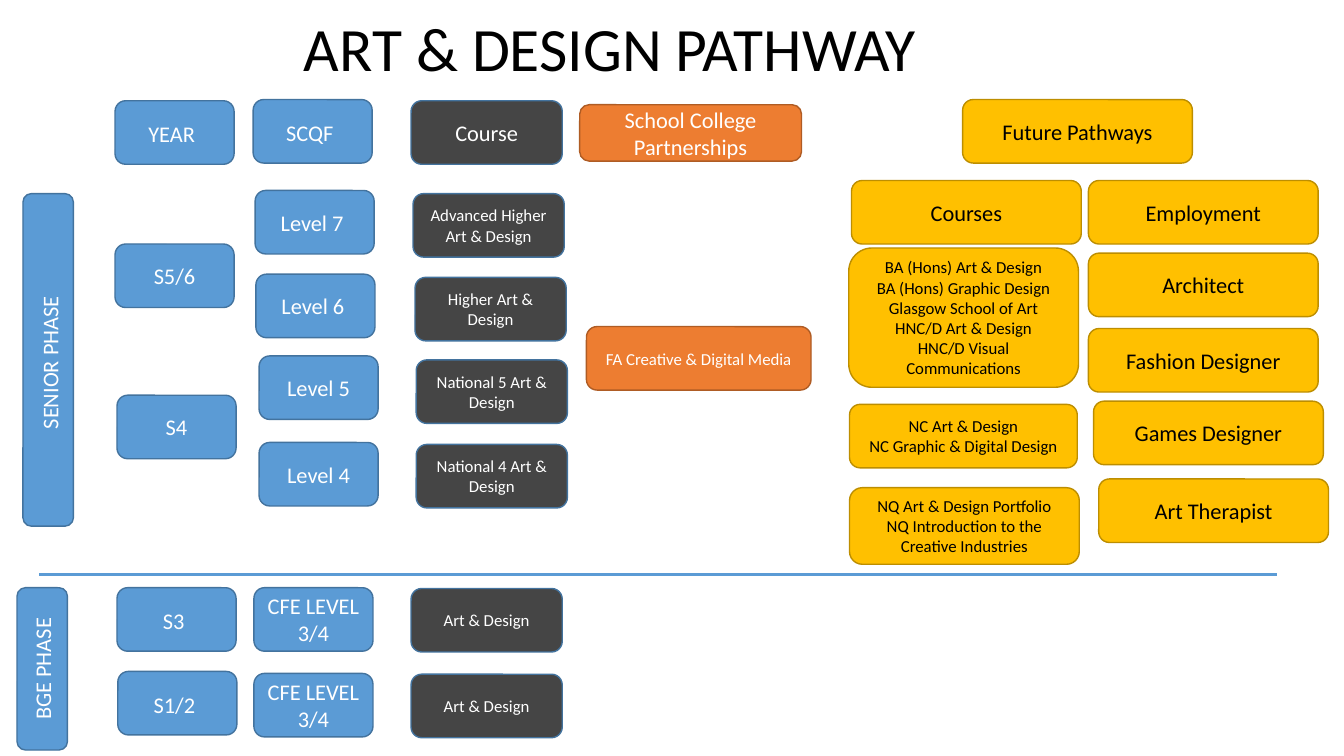
"""Build the Art & Design pathway slide."""
import lxml.etree
import pptx
import pptx.dml.color
import pptx.enum.shapes
import pptx.enum.text
import pptx.oxml.ns
import pptx.util
from pptx.util import Cm

COLOURS = {
    "blue": "5B9BD5", "blue_edge": "43739E",
    "grey": "454545",
    "orange": "ED7D31", "orange_edge": "AF5C24",
    "gold": "FFC000", "gold_edge": "BD8E00",
    "white": "FFFFFF", "black": "000000",
}
STYLES = {
    "blue": ("blue_edge", "white"),
    "grey": ("blue_edge", "white"),
    "orange": ("orange_edge", "white"),
    "gold": ("gold_edge", "black"),
}
LEVEL_W, COURSE_W, FUTURE_W, PHASE_W, BOX_H = 3, 3.81, 5.79, 1.27, 1.6

YEARS = [
    ("YEAR", 2.9, 2.54, 18),
    ("S5/6", 2.9, 6.15, None),
    ("S4", 2.95, 9.96, None),
    ("S3", 2.95, 14.81, 18),
    ("S1/2", 2.97, 16.92, 18),
]
LEVELS = [
    ("SCQF", 6.38, 2.51, 18),
    ("Level 7", 6.43, 4.8, 16),
    ("Level 6", 6.45, 6.91, 16),
    ("Level 5", 6.53, 8.97, None),
    ("Level 4", 6.53, 11.15, None),
    ("CFE LEVEL 3/4", 6.4, 14.81, None),
    ("CFE LEVEL 3/4", 6.4, 16.97, None),
]
COURSES = [
    ("Advanced Higher Art & Design", 10.41, 4.88),
    ("Higher Art & Design", 10.46, 6.99),
    ("National 5 Art & Design", 10.49, 9.07),
    ("National 4 Art & Design", 10.49, 11.2),
    ("Art & Design", 10.36, 14.83),
    ("Art & Design", 10.36, 16.99),
]
FUTURES = [
    ("Future Pathways", 24.26, 2.51),
    ("Courses", 21.46, 4.55),
    ("Employment", 27.43, 4.55),
    ("Architect", 27.43, 6.38),
    ("Fashion Designer", 27.43, 8.28),
    ("Games Designer", 27.56, 10.11),
    ("Art Therapist", 27.69, 12.07),
]
FURTHER_STUDY = [
    ("BA (Hons) Art & Design\nBA (Hons) Graphic Design\nGlasgow School of Art\n"
     "HNC/D Art & Design\nHNC/D Visual Communications", 21.39, 6.25, 5.79, 3.51),
    ("NC Art & Design\nNC Graphic & Digital Design", 21.41, 10.19, 5.74, 1.6),
    ("NQ Art & Design Portfolio\nNQ Introduction to the Creative Industries",
     21.41, 12.29, 5.79, 1.93),
]


def rgb(name):
    return pptx.dml.color.RGBColor.from_string(COLOURS[name])


def write(frame, text, size=16, colour="white", spacing=None, tail_size=None):
    """Fill a frame with centred lines; tail_size adds a closing space of that size."""
    frame.word_wrap = True
    frame.auto_size = pptx.enum.text.MSO_AUTO_SIZE.NONE
    frame.vertical_anchor = pptx.enum.text.MSO_ANCHOR.MIDDLE
    for index, line in enumerate(text.split("\n")):
        paragraph = frame.add_paragraph() if index else frame.paragraphs[0]
        paragraph.alignment = pptx.enum.text.PP_ALIGN.CENTER
        if spacing:
            paragraph.line_spacing = spacing
        pieces = [(line, size)] + ([(" ", tail_size)] if tail_size else [])
        for piece, points in pieces:
            run = paragraph.add_run()
            run.text = piece
            run.font.name = "Calibri"
            run.font.size = pptx.util.Pt(points)
            run.font.color.rgb = rgb(colour)


class PathwaySlide:
    """Holds the current slide and draws its elements in centimetres."""

    def __init__(self, deck):
        self.slide = deck.slides.add_slide(deck.slide_layouts[5])

    def title(self, text, left, top, width, height):
        heading = self.slide.shapes.title
        heading.left, heading.top = Cm(left), Cm(top)
        heading.width, heading.height = Cm(width), Cm(height)
        write(heading.text_frame, text, size=44, colour="black", spacing=0.9)

    def box(self, text, left, top, width, height=BOX_H, style="blue",
            upright=False, **text_format):
        edge, ink = STYLES[style]
        card = self.slide.shapes.add_shape(
            pptx.enum.shapes.MSO_SHAPE.ROUNDED_RECTANGLE,
            Cm(left), Cm(top), Cm(width), Cm(height))
        card.shadow.inherit = False
        card.fill.solid()
        card.fill.fore_color.rgb = rgb(style)
        card.line.color.rgb = rgb(edge)
        card.line.width = pptx.util.Pt(1)
        if upright:
            card.text_frame._txBody.bodyPr.set("vert", "vert270")
        write(card.text_frame, text, colour=ink, **text_format)

    def divider(self, left, right, top):
        rule = self.slide.shapes.add_connector(
            pptx.enum.shapes.MSO_CONNECTOR.STRAIGHT,
            Cm(left), Cm(top), Cm(right), Cm(top))
        rule.line.color.rgb = rgb("blue")
        rule.line.width = pptx.util.Pt(2.25)
        lxml.etree.SubElement(rule._element.spPr, pptx.oxml.ns.qn("a:effectLst"))


def main():
    deck = pptx.Presentation()
    deck.slide_width, deck.slide_height = Cm(33.87), Cm(19.05)
    pathway = PathwaySlide(deck)
    pathway.title("ART & DESIGN PATHWAY", 5.31, 0.23, 20.12, 2.13)

    for label, left, top, tail_size in YEARS + LEVELS:
        pathway.box(label, left, top, LEVEL_W, tail_size=tail_size)

    pathway.box("Course", 10.36, 2.54, COURSE_W, style="grey")
    for course, left, top in COURSES:
        pathway.box(course, left, top, COURSE_W, style="grey", size=12)

    pathway.box("School College Partnerships", 14.61, 2.64, 5.59, 1.42, style="orange")
    pathway.box("FA Creative & Digital Media", 14.78, 8.23, 5.66, style="orange", size=12)

    for future, left, top in FUTURES:
        pathway.box(future, left, top, FUTURE_W, style="gold")
    for study, left, top, width, height in FURTHER_STUDY:
        pathway.box(study, left, top, width, height, style="gold", size=12)

    pathway.box("SENIOR PHASE", 0.58, 4.88, PHASE_W, 8.38, upright=True, tail_size=18)
    pathway.box("BGE PHASE", 0.43, 14.81, PHASE_W, 4.09, upright=True)
    pathway.divider(0.99, 32.18, 14.48)
    deck.save("out.pptx")


if __name__ == "__main__":
    main()
